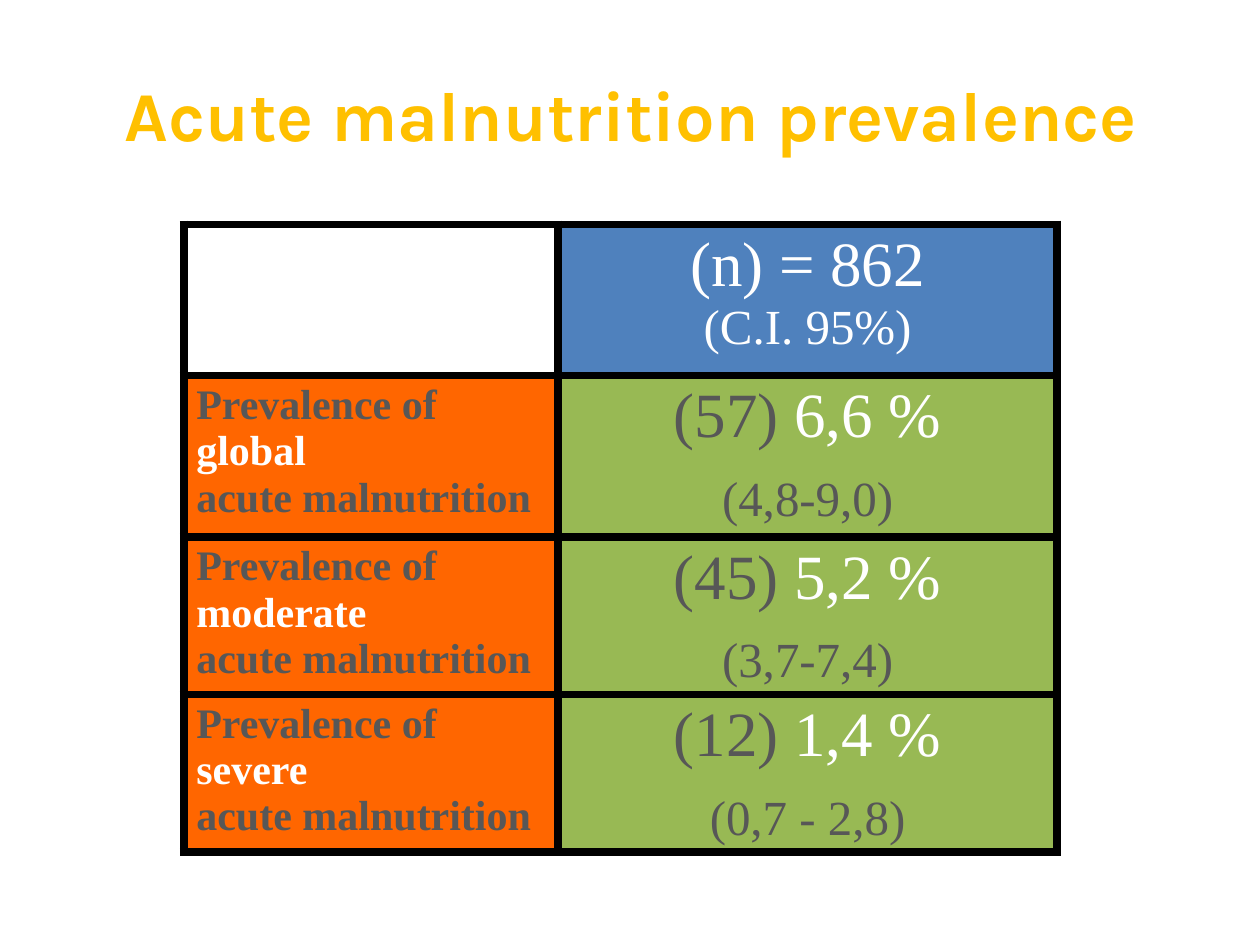
import pptx
import pptx.dml.color
import pptx.enum.text
import pptx.oxml
import pptx.oxml.ns
import pptx.util

Pt = pptx.util.Pt
ALIGN = pptx.enum.text.PP_ALIGN
COLORS = {
    "title": "FFC000",
    "header": "4F81BD",
    "label": "FF6600",
    "value": "98B954",
    "grey": "575757",
    "white": "FFFFFF",
    "border": "000000",
}
FONT = "Times New Roman"
COLUMN_WIDTHS = [214, 285]
ROW_HEIGHTS = [86.4, 92.2, 90, 90]
PREVALENCES = [
    ("global", "(57) ", "6,6 %", "(4,8-9,0)"),
    ("moderate", "(45) ", "5,2 %", "(3,7-7,4)"),
    ("severe", "(12) ", "1,4 %", "(0,7 - 2,8)"),
]


def rgb(name):
    """Return the named colour."""
    return pptx.dml.color.RGBColor.from_string(COLORS[name])


def add_title(slide, text):
    """Fill and place the title placeholder."""
    title = slide.shapes.title
    title.left, title.top, title.width, title.height = Pt(36.5), Pt(20), Pt(648), Pt(90)
    title.text_frame.vertical_anchor = pptx.enum.text.MSO_ANCHOR.MIDDLE
    paragraph = title.text_frame.paragraphs[0]
    paragraph.text = text
    paragraph.alignment = ALIGN.CENTER
    paragraph.font.name = "Karla"
    paragraph.font.size = Pt(40)
    paragraph.font.bold = True
    paragraph.font.color.rgb = rgb("title")


def set_borders(cell, width):
    """Draw a solid line on all four sides of a cell."""
    properties = cell._tc.get_or_add_tcPr()
    for position, side in enumerate(("lnL", "lnR", "lnT", "lnB")):
        line = pptx.oxml.parse_xml(
            f'<a:{side} {pptx.oxml.ns.nsdecls("a")} w="{Pt(width)}"><a:solidFill>'
            f'<a:srgbClr val="{COLORS["border"]}"/></a:solidFill></a:{side}>'
        )
        properties.insert(position, line)


def write_paragraph(paragraph, runs, size, alignment, bold=False, space_before=0):
    """Write (text, colour) runs into a paragraph."""
    paragraph.alignment = alignment
    if space_before:
        paragraph.space_before = Pt(space_before)
    paragraph.font.name = FONT
    paragraph.font.size = Pt(size)
    paragraph.font.bold = bold
    for text, color in runs:
        run = paragraph.add_run()
        run.text = text
        run.font.color.rgb = rgb(color)


def fill_cell(cell, fill, first, second, sizes, alignment, bold=False, gap=0):
    """Colour a cell and write its two paragraphs."""
    cell.fill.solid()
    cell.fill.fore_color.rgb = rgb(fill)
    cell.margin_bottom = 0
    frame = cell.text_frame
    write_paragraph(frame.paragraphs[0], first, sizes[0], alignment, bold)
    write_paragraph(frame.add_paragraph(), second, sizes[1], alignment, bold, gap)


def add_prevalence_table(slide):
    """Add the table of prevalences with confidence intervals."""
    frame = slide.shapes.add_table(
        len(ROW_HEIGHTS), len(COLUMN_WIDTHS), Pt(105), Pt(128.2),
        Pt(sum(COLUMN_WIDTHS)), Pt(sum(ROW_HEIGHTS)),
    )
    table = frame.table
    table.first_row = table.horz_banding = False
    for column, width in zip(table.columns, COLUMN_WIDTHS):
        column.width = Pt(width)
    for row, height in zip(table.rows, ROW_HEIGHTS):
        row.height = Pt(height)
    for cell in table.iter_cells():
        cell.fill.background()
        set_borders(cell, 5)
    fill_cell(table.cell(0, 1), "header", [("(n) = 862", "white")],
              [("(C.I. 95%)", "white")], (36, 28), ALIGN.CENTER)
    for row, (degree, count, percent, interval) in enumerate(PREVALENCES, 1):
        fill_cell(table.cell(row, 0), "label",
                  [("Prevalence of ", "grey"), (degree, "white")],
                  [("acute malnutrition", "grey")], (24, 24), ALIGN.LEFT, bold=True)
        fill_cell(table.cell(row, 1), "value",
                  [(count, "grey"), (percent, "white")],
                  [(interval, "grey")], (36, 28), ALIGN.CENTER, gap=12)


def main():
    """Build and save the slide."""
    presentation = pptx.Presentation()
    presentation.slide_width, presentation.slide_height = Pt(720), Pt(540)
    slide = presentation.slides.add_slide(presentation.slide_layouts[5])
    add_title(slide, "Acute malnutrition prevalence")
    add_prevalence_table(slide)
    presentation.save("out.pptx")


if __name__ == "__main__":
    main()
